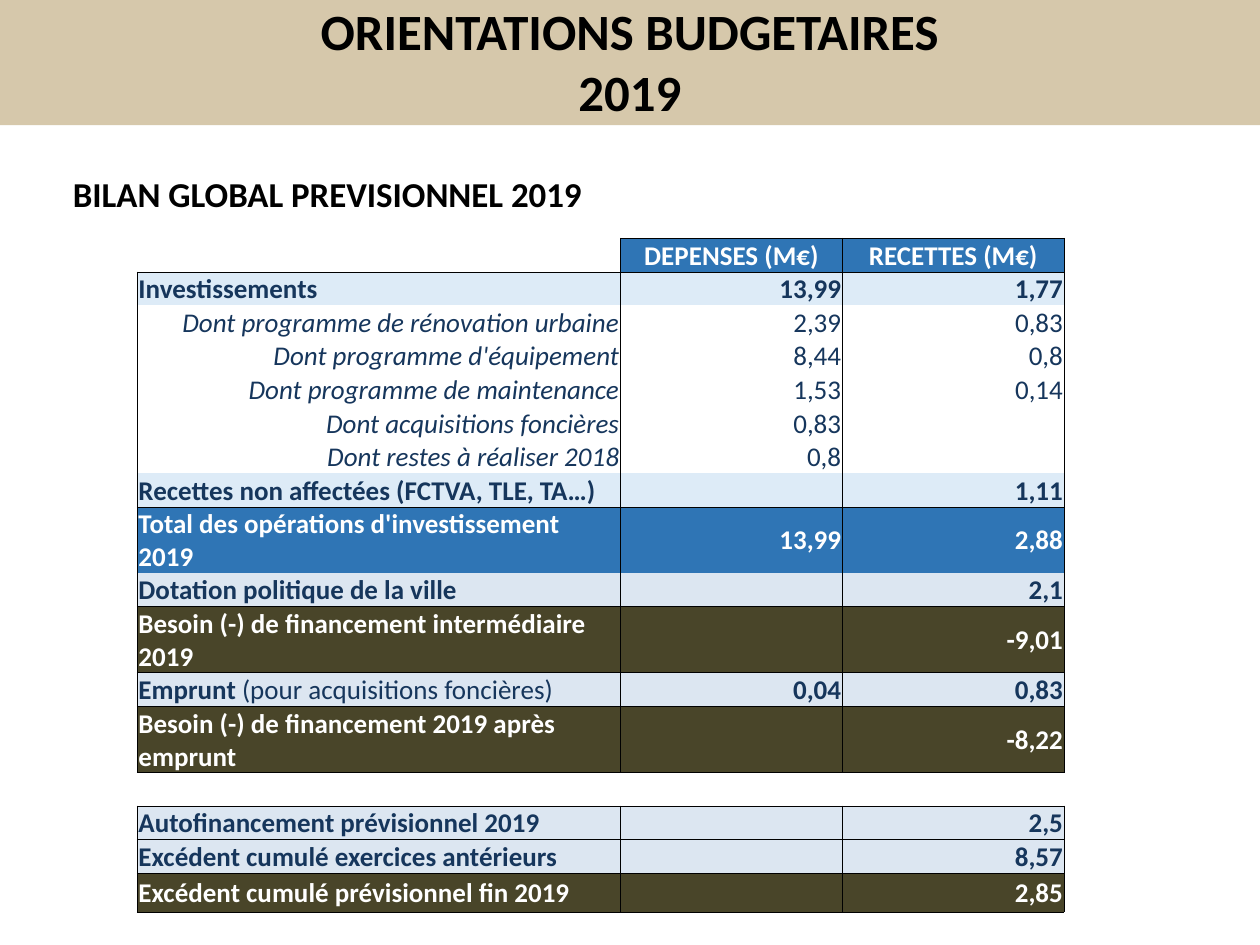
import pptx
import pptx.util
import pptx.dml.color
import pptx.enum.shapes
import pptx.enum.text
import pptx.oxml.ns
from lxml import etree

ALIGN = pptx.enum.text.PP_ALIGN
MIDDLE = pptx.enum.text.MSO_ANCHOR.MIDDLE
BLACK, WHITE, NAVY = "000000", "FFFFFF", "16365C"
SAND, BLUE, SKY, PALE, OLIVE = "D6C8AB", "2F75B5", "DDEBF7", "DCE6F1", "494529"


def color(hex_text):
    return pptx.dml.color.RGBColor.from_string(hex_text)


def write(p, text, size=17, ink=BLACK, bold=True, italic=False, align=ALIGN.LEFT):
    """Add text to a paragraph; a line feed makes a line break."""
    p.alignment = align
    for i, line in enumerate(text.split("\n")):
        if i:
            p.add_line_break()
        r = p.add_run()
        r.text = line
        f = r.font
        f.name, f.size, f.bold, f.italic = "Calibri", pptx.util.Pt(size), bold, italic
        f.color.rgb = color(ink)


def border(cell, sides):
    """Draw thin black lines on the named sides and none on the others."""
    tcPr = cell._tc.get_or_add_tcPr()
    for side in "LRTB":
        ln = etree.SubElement(tcPr, pptx.oxml.ns.qn(f"a:ln{side}"), w="6350")
        if side in sides:
            fill = etree.SubElement(ln, pptx.oxml.ns.qn("a:solidFill"))
            etree.SubElement(fill, pptx.oxml.ns.qn("a:srgbClr"), val=BLACK)
        else:
            etree.SubElement(ln, pptx.oxml.ns.qn("a:noFill"))


class Deck:
    """Places elements on a grid of 100 columns by 100 rows."""

    def __init__(self, width, height):
        self.prs = pptx.Presentation()
        self.prs.slide_width = pptx.util.Cm(width)
        self.prs.slide_height = pptx.util.Cm(height)
        self.s = self.prs.slides.add_slide(self.prs.slide_layouts[6])

    def x(self, cols):
        return round(self.prs.slide_width * cols / 100)

    def y(self, rows):
        return round(self.prs.slide_height * rows / 100)

    def box(self, left, top, width, height):
        return self.x(left), self.y(top), self.x(width), self.y(height)

    def band(self, *place, fill):
        sp = self.s.shapes.add_shape(
            pptx.enum.shapes.MSO_SHAPE.RECTANGLE, *self.box(*place))
        sp.shadow.inherit = False
        sp.fill.solid()
        sp.fill.fore_color.rgb = color(fill)
        sp.line.fill.background()

    def text(self, *place, text, anchor=pptx.enum.text.MSO_ANCHOR.TOP, **style):
        tf = self.s.shapes.add_textbox(*self.box(*place)).text_frame
        tf.word_wrap = True
        tf.vertical_anchor = anchor
        write(tf.paragraphs[0], text, **style)

    def table(self, left, top, widths, heights):
        table = self.s.shapes.add_table(
            len(heights), len(widths),
            *self.box(left, top, sum(widths), sum(heights))).table
        table.first_row = table.horz_banding = False
        # Plain table style, without grid or fill
        style = table._tbl.tblPr.find(pptx.oxml.ns.qn("a:tableStyleId"))
        style.text = "{2D5ABB26-0587-4C30-8999-92F81FD0307C}"
        for column, width in zip(table.columns, widths):
            column.width = self.x(width)
        for row, height in zip(table.rows, heights):
            row.height = self.y(height)
        return table

    def cell(self, cell, text, fill, sides, **style):
        cell.margin_left = cell.margin_right = cell.margin_top = pptx.util.Inches(0.01)
        cell.margin_bottom = 0
        cell.vertical_anchor = MIDDLE
        border(cell, sides)
        if fill:
            cell.fill.solid()
            cell.fill.fore_color.rgb = color(fill)
        else:
            cell.fill.background()
        p = cell.text_frame.paragraphs[0]
        if text:
            main, _, note = text.partition("|")
            write(p, main, **style)
            if note:
                write(p, note, **{**style, "bold": False})
        else:
            p._p.get_or_add_endParaRPr().set("sz", "1700")


# Row kinds: fill, ink, bordered sides
KINDS = {
    "head": (BLUE, WHITE, "LTRB"),
    "invest": (SKY, NAVY, "LTR"),
    "detail": (None, NAVY, "LR"),
    "other": (SKY, NAVY, "LRB"),
    "total": (BLUE, WHITE, "LTR"),
    "grant": (PALE, NAVY, "LRB"),
    "item": (PALE, NAVY, "LTRB"),
    "need": (OLIVE, WHITE, "LTRB"),
    "gap": (None, NAVY, "TB"),
}
LINE, DOUBLE, LAST = 3.54, 7, 4.11

# Row kind, height, label, expenses, receipts
BUDGET = [
    ("head", LINE, "", "DEPENSES (M€)", "RECETTES (M€)"),
    ("invest", LINE, "Investissements", "13,99", "1,77"),
    ("detail", LINE, "Dont programme de rénovation urbaine", "2,39", "0,83"),
    ("detail", LINE, "Dont programme d'équipement", "8,44", "0,8"),
    ("detail", LINE, "Dont programme de maintenance", "1,53", "0,14"),
    ("detail", LINE, "Dont acquisitions foncières", "0,83", ""),
    ("detail", LINE, "Dont restes à réaliser 2018", "0,8", ""),
    ("other", LINE, "Recettes non affectées (FCTVA, TLE, TA…)", "", "1,11"),
    ("total", DOUBLE, "Total des opérations d'investissement 2019", "13,99", "2,88"),
    ("grant", LINE, "Dotation politique de la ville", "", "2,1"),
    ("need", DOUBLE, "Besoin (-) de financement intermédiaire 2019", "", "-9,01"),
    ("item", LINE, "Emprunt |(pour acquisitions foncières)", "0,04", "0,83"),
    ("need", DOUBLE, "Besoin (-) de financement 2019 après emprunt", "", "-8,22"),
    ("gap", LINE, "", "", ""),
    ("item", LINE, "Autofinancement prévisionnel 2019", "", "2,5"),
    ("item", LINE, "Excédent cumulé exercices antérieurs", "", "8,57"),
    ("need", LAST, "Excédent cumulé prévisionnel fin 2019", "", "2,85"),
]


def main():
    deck = Deck(28, 21)

    # Title band and heading
    deck.band(0, 0, 100, 13.25, fill=SAND)
    deck.text(5, 0, 90, 12.82, text="ORIENTATIONS BUDGETAIRES\n2019",
              size=32, align=ALIGN.CENTER, anchor=MIDDLE)
    deck.text(4.9, 17.65, 85.75, 5.68, text="BILAN GLOBAL PREVISIONNEL 2019", size=22)

    # Budget table
    table = deck.table(10.9, 25.22, [38.35, 17.6, 17.6], [row[1] for row in BUDGET])
    for i, (kind, _, *texts) in enumerate(BUDGET):
        fill, ink, sides = KINDS[kind]
        detail = kind == "detail"
        for j, text in enumerate(texts):
            corner = kind == "head" and j == 0
            if kind == "head":
                align = ALIGN.CENTER
            else:
                align = ALIGN.RIGHT if j or detail else ALIGN.LEFT
            deck.cell(table.cell(i, j), text, WHITE if corner else fill,
                      "RB" if corner else sides, ink=ink, align=align,
                      bold=not detail, italic=detail and j == 0)

    deck.prs.save("out.pptx")


if __name__ == "__main__":
    main()
